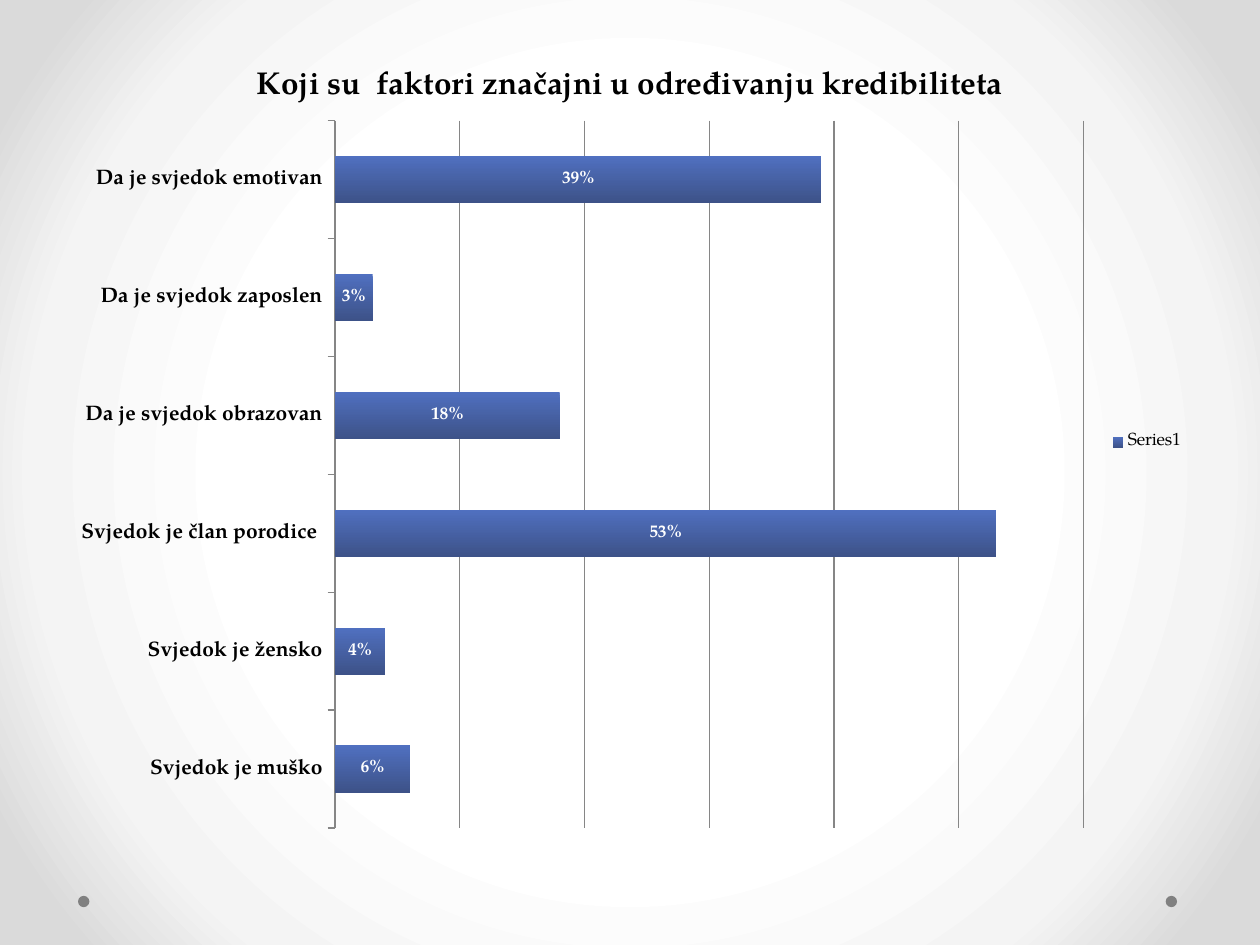
from pptx import Presentation
from pptx import oxml
from pptx.chart import data
from pptx.dml.color import RGBColor
from pptx.enum import chart as ch, shapes
from pptx.oxml import ns
from pptx.util import Pt

FONT = "TeX Gyre Pagella"
HUES = {"ink": "000000", "label": "FFFFFF", "dot": "808080", "grid": "868686",
        "bar": "5070C0", "base": "3D5288"}
GLOW = [(0, "FFFFFF"), (50, "FFFFFF"), (76, "F4F4F4"), (92, "DADADA"), (100, "DADADA")]
TITLE = "Koji su  faktori značajni u određivanju kredibiliteta"
SHARES = {
    "Svjedok je muško": 0.06,
    "Svjedok je žensko": 0.04,
    "Svjedok je član porodice ": 0.53,
    "Da je svjedok obrazovan": 0.18,
    "Da je svjedok zaposlen": 0.03,
    "Da je svjedok emotivan": 0.39,
}


def hue(name):
    return RGBColor.from_string(HUES[name])


def style(font, size, bold=False, name="ink"):
    font.name, font.size, font.bold = FONT, Pt(size), bold
    font.color.rgb = hue(name)


def paint_back(slide):
    """Radial glow from the centre of the slide."""
    slide.background.fill.solid()
    stops = "".join(f'<a:gs pos="{pos * 1000}"><a:srgbClr val="{tone}"/></a:gs>'
                    for pos, tone in GLOW)
    glow = oxml.parse_xml(
        f'<a:gradFill {ns.nsdecls("a")} rotWithShape="1"><a:gsLst>{stops}</a:gsLst>'
        '<a:path path="circle"><a:fillToRect l="50000" t="50000" r="50000" b="50000"/>'
        '</a:path></a:gradFill>')
    solid = next(slide.element.iter(ns.qn("a:solidFill")))
    solid.getparent().replace(solid, glow)


def add_dots(slide, left, top, width, size):
    """One dot at each end of the box."""
    for x in (left, left + width - size):
        dot = slide.shapes.add_shape(shapes.MSO_SHAPE.OVAL, Pt(x), Pt(top), Pt(size), Pt(size))
        dot.shadow.inherit = False
        dot.fill.solid()
        dot.fill.fore_color.rgb = hue("dot")
        dot.line.fill.background()


def set_axes(chart):
    cat, val = chart.category_axis, chart.value_axis
    style(cat.tick_labels.font, 12, True)
    cat.major_tick_mark = ch.XL_TICK_MARK.OUTSIDE
    val.minimum_scale, val.maximum_scale, val.major_unit = 0, 0.6, 0.1
    val.has_major_gridlines = True
    val.visible = False
    for line in (cat.format.line, val.major_gridlines.format.line):
        line.color.rgb = hue("grid")
        line.width = Pt(0.75)


def set_bars(plot):
    plot.gap_width, plot.overlap = 150, 100
    plot.vary_by_categories = False
    bars = plot.series[0]
    fill = bars.format.fill
    fill.gradient()
    fill.gradient_angle = 270
    for stop, name in zip(fill.gradient_stops, ("bar", "base")):
        stop.color.rgb = hue(name)
    tags = bars.data_labels
    tags.show_value = True
    tags.number_format, tags.number_format_is_linked = "0%", False
    tags.position = ch.XL_LABEL_POSITION.CENTER
    style(tags.font, 10, True, "label")


def set_frame(chart, x, y, w, h):
    """Fix the inner plot box, in shares of the chart."""
    area = chart._chartSpace.chart.plotArea
    for old in area.findall(ns.qn("c:layout")):
        area.remove(old)
    parts = "".join(f'<c:{key} val="{num}"/>' for key, num in
                    (("x", x), ("y", y), ("w", w), ("h", h)))
    area.insert(0, oxml.parse_xml(
        f'<c:layout {ns.nsdecls("c")}><c:manualLayout><c:layoutTarget val="inner"/>'
        f'<c:xMode val="edge"/><c:yMode val="edge"/>{parts}</c:manualLayout></c:layout>'))


def add_bars(slide, left, top, width, height):
    """Bar chart of the factors, with title and legend."""
    table = data.CategoryChartData(number_format="0%")
    table.categories = list(SHARES)
    table.add_series("Series1", list(SHARES.values()))
    chart = slide.shapes.add_chart(ch.XL_CHART_TYPE.BAR_STACKED, Pt(left), Pt(top),
                                   Pt(width), Pt(height), table).chart
    style(chart.font, 10)
    chart.has_title = True
    run = chart.chart_title.text_frame.paragraphs[0].add_run()
    run.text = TITLE
    style(run.font, 18, True)
    chart.chart_title.include_in_layout = False
    chart.has_legend = True
    chart.legend.position = ch.XL_LEGEND_POSITION.RIGHT
    chart.legend.include_in_layout = False
    style(chart.legend.font, 10)
    set_axes(chart)
    set_bars(chart.plots[0])
    set_frame(chart, 0.24, 0.1, 0.66, 0.88)


def main():
    deck = Presentation()
    deck.slide_width, deck.slide_height = Pt(720), Pt(540)
    slide = deck.slides.add_slide(deck.slide_layouts[6])
    paint_back(slide)
    add_dots(slide, 44.6, 511.9, 628, 6.5)
    add_bars(slide, 36, 23, 648, 459.4)
    deck.save("out.pptx")


if __name__ == "__main__":
    main()
